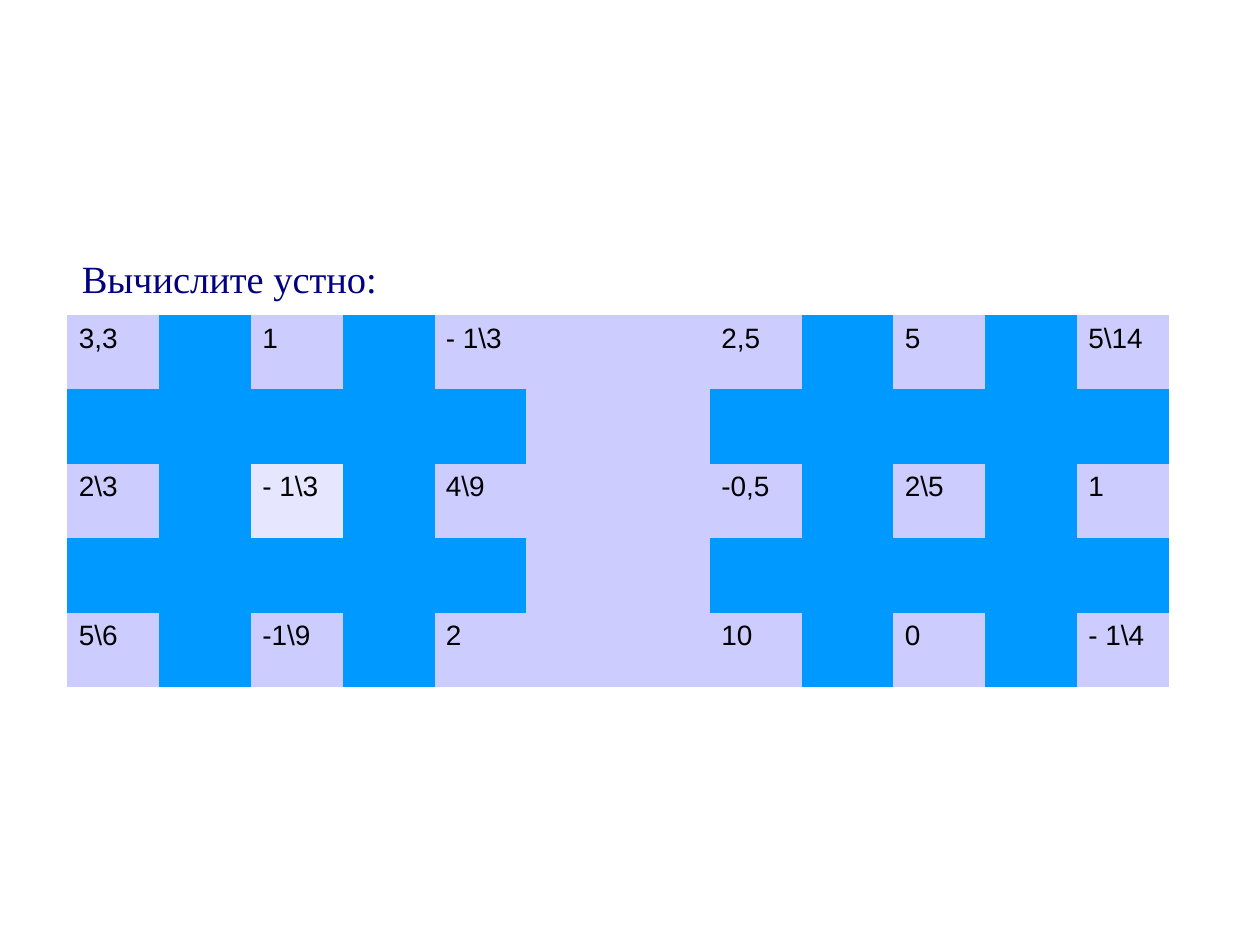
from pptx import Presentation
from pptx.dml.color import RGBColor
from pptx.enum.text import MSO_ANCHOR
from pptx.util import Cm, Pt

NAVY = RGBColor(0x00, 0x00, 0x80)
BLACK = RGBColor(0x00, 0x00, 0x00)
BLUE = RGBColor(0x00, 0x99, 0xFF)
LILAC = RGBColor(0xCC, 0xCC, 0xFF)
PALE_LILAC = RGBColor(0xE6, 0xE6, 0xFF)
NO_STYLE_NO_GRID = "{2D5ABB26-0587-4C30-8999-92F81FD0307C}"

LEFT_NUMBERS = [
    ["3,3", "1", r"- 1\3"],
    [r"2\3", r"- 1\3", r"4\9"],
    [r"5\6", r"-1\9", "2"],
]
RIGHT_NUMBERS = [
    ["2,5", "5", r"5\14"],
    ["-0,5", r"2\5", "1"],
    ["10", "0", r"- 1\4"],
]
ROWS, COLUMNS, GAP_COLUMN = 5, 11, 5
COLUMN_WIDTH, ROW_HEIGHT = 1.85, 1.5


def write(frame, text, *, font, size, color, line_spacing):
    paragraph = frame.paragraphs[0]
    paragraph.line_spacing = line_spacing
    span = paragraph.add_run()
    span.text = text
    span.font.name = font
    span.font.size = Pt(size)
    span.font.color.rgb = color


deck = Presentation()
deck.slide_width, deck.slide_height = Cm(25.4), Cm(19.05)
page = deck.slides.add_slide(deck.slide_layouts[6])

heading = page.shapes.add_textbox(Cm(1.42), Cm(5.05), Cm(22.5), Cm(10.39))
frame = heading.text_frame
frame.word_wrap = True
frame.vertical_anchor = MSO_ANCHOR.TOP
frame.margin_left = frame.margin_right = Cm(0.23)
frame.margin_top, frame.margin_bottom = Cm(0.15), Cm(0.1)
write(frame, "Вычислите устно:", font="Times New Roman", size=22,
      color=NAVY, line_spacing=0.95)

table_frame = page.shapes.add_table(
    ROWS, COLUMNS, Cm(1.36), Cm(6.35),
    Cm(COLUMN_WIDTH * (COLUMNS + 1)), Cm(ROW_HEIGHT * ROWS))
table = table_frame.table
table.first_row = table.horz_banding = False
table._tbl.tblPr.find("{*}tableStyleId").text = NO_STYLE_NO_GRID

for column in table.columns:
    column.width = Cm(COLUMN_WIDTH)
table.columns[GAP_COLUMN].width = Cm(2 * COLUMN_WIDTH)
for row in table.rows:
    row.height = Cm(ROW_HEIGHT)

for cell in table.iter_cells():
    cell.fill.solid()
    cell.fill.fore_color.rgb = BLUE
    cell.margin_left = cell.margin_right = cell.margin_top = Cm(0.23)
    cell.margin_bottom = Cm(0.13)

gap = table.cell(0, GAP_COLUMN)
gap.merge(table.cell(ROWS - 1, GAP_COLUMN))
gap.fill.fore_color.rgb = LILAC

# Numbers sit in every second row and column of each square.
for first_column, numbers in ((0, LEFT_NUMBERS), (GAP_COLUMN + 1, RIGHT_NUMBERS)):
    for row_index, row_numbers in enumerate(numbers):
        for column_index, number in enumerate(row_numbers):
            cell = table.cell(2 * row_index, first_column + 2 * column_index)
            cell.fill.fore_color.rgb = LILAC
            write(cell.text_frame, number, font="Arial", size=16,
                  color=BLACK, line_spacing=0.87)
table.cell(2, 2).fill.fore_color.rgb = PALE_LILAC

deck.save("out.pptx")
